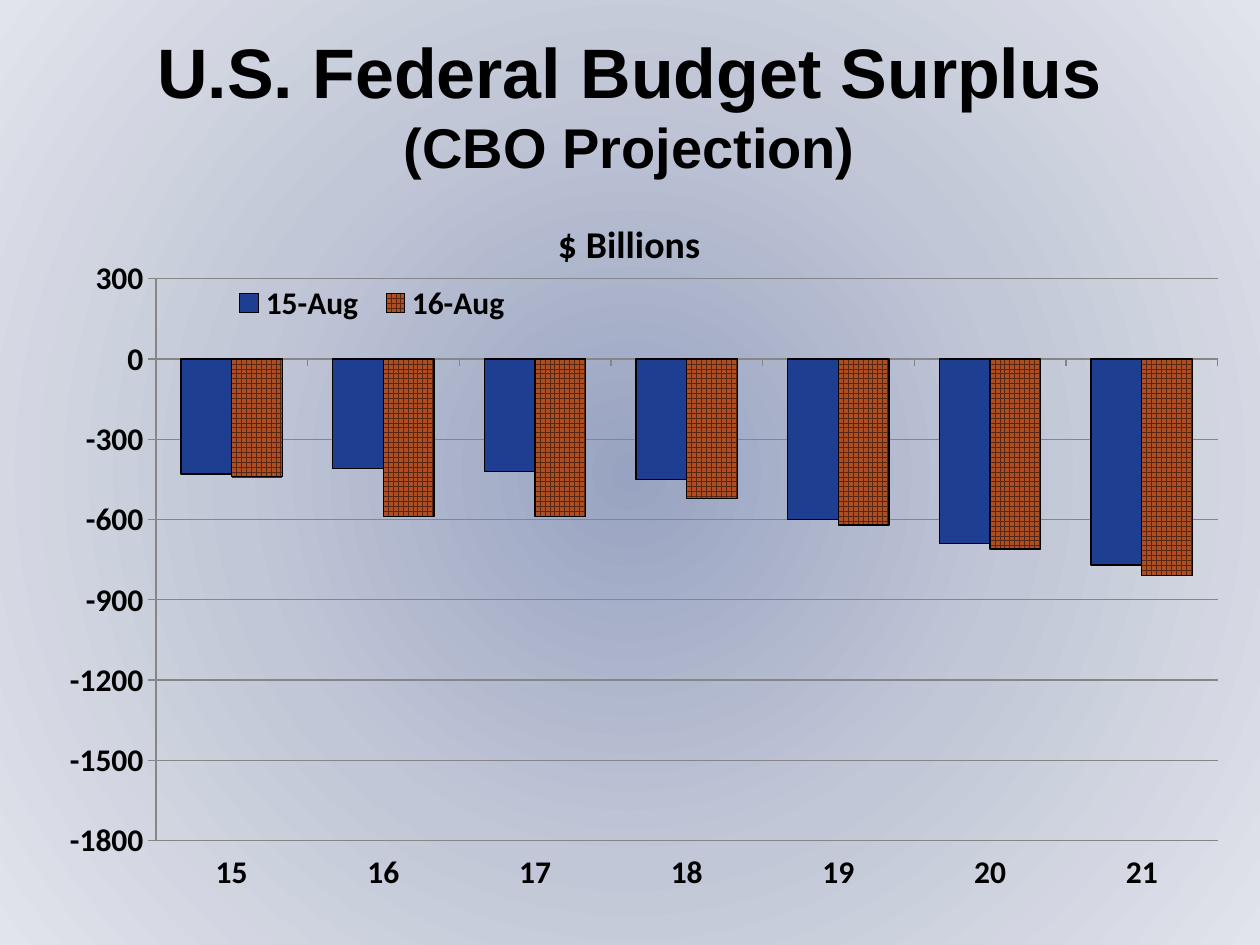
from dataclasses import dataclass

from lxml import etree
from pptx import Presentation
from pptx.chart.data import CategoryChartData
from pptx.dml.color import RGBColor
from pptx.enum.chart import XL_CHART_TYPE, XL_LEGEND_POSITION, XL_TICK_LABEL_POSITION, XL_TICK_MARK
from pptx.enum.dml import MSO_PATTERN
from pptx.enum.text import MSO_ANCHOR, MSO_AUTO_SIZE, PP_ALIGN
from pptx.oxml import parse_xml
from pptx.oxml.ns import nsdecls, qn
from pptx.util import Inches, Pt

COLUMNS = XL_CHART_TYPE.COLUMN_CLUSTERED
LEGEND_TOP = XL_LEGEND_POSITION.TOP
LABELS_LOW = XL_TICK_LABEL_POSITION.LOW
TICK_OUT = XL_TICK_MARK.OUTSIDE
TICK_NONE = XL_TICK_MARK.NONE
LARGE_GRID = MSO_PATTERN.LARGE_GRID
MIDDLE = MSO_ANCHOR.MIDDLE
NO_AUTOFIT = MSO_AUTO_SIZE.NONE
CENTER = PP_ALIGN.CENTER
TITLE_ONLY = 5


@dataclass(frozen=True)
class Theme:
    title_font: str = "Arial"
    chart_font: str = "Calibri"
    title_size: float = 40
    subtitle_size: float = 32
    chart_title_size: float = 21.6
    chart_size: float = 18
    line_width: float = 0.75
    text: str = "000000"
    grid: str = "868686"
    earlier: str = "1E3E92"
    later: str = "AE4E22"
    later_grid: str = "572711"
    background: tuple = ((0, "98A3C1"), (50, "C2C7D7"), (100, "E1E4EB"))


def color(value):
    return RGBColor.from_string(value)


class SlideBuilder:
    def __init__(self, slide, theme):
        self.slide = slide
        self.theme = theme

    def style_font(self, font, name, size):
        font.name = name
        font.size = Pt(size)
        font.bold = True
        font.color.rgb = color(self.theme.text)

    def style_line(self, line, value):
        line.color.rgb = color(value)
        line.width = Pt(self.theme.line_width)

    def background(self):
        self.slide.background.fill.solid()
        properties = self.slide.element.find(".//" + qn("p:bgPr"))
        stops = "".join(
            f'<a:gs pos="{position * 1000}"><a:srgbClr val="{value}"/></a:gs>'
            for position, value in self.theme.background
        )
        gradient = parse_xml(
            f'<a:gradFill {nsdecls("a")} rotWithShape="1"><a:gsLst>{stops}</a:gsLst>'
            '<a:path path="circle"><a:fillToRect l="50000" t="50000" r="50000" b="50000"/>'
            "</a:path></a:gradFill>"
        )
        properties.replace(properties.find(qn("a:solidFill")), gradient)

    def title(self, lines, left, top, width, height):
        box = self.slide.shapes.title
        box.left, box.top, box.width, box.height = left, top, width, height
        frame = box.text_frame
        frame.word_wrap = True
        frame.auto_size = NO_AUTOFIT
        frame.vertical_anchor = MIDDLE
        for index, (text, size) in enumerate(lines):
            para = frame.add_paragraph() if index else frame.paragraphs[0]
            para.alignment = CENTER
            para.space_before = Pt(0)
            span = para.add_run()
            span.text = text
            self.style_font(span.font, self.theme.title_font, size)

    def manual_layout(self, parent, left, top, width, height, inner=False):
        for previous in parent.findall(qn("c:layout")):
            parent.remove(previous)
        layout = etree.Element(qn("c:layout"))
        manual = etree.SubElement(layout, qn("c:manualLayout"))
        settings = [("layoutTarget", "inner")] if inner else []
        settings += [("xMode", "edge"), ("yMode", "edge")]
        settings += [("x", left), ("y", top), ("w", width), ("h", height)]
        for name, value in settings:
            etree.SubElement(manual, qn(f"c:{name}")).set("val", str(value))
        position = parent.find(qn("c:legendPos"))
        if position is None:
            parent.insert(0, layout)
        else:
            position.addnext(layout)

    def column_chart(self, title, categories, series, left, top, width, height):
        theme = self.theme
        data = CategoryChartData()
        data.categories = categories
        for name, values in series:
            data.add_series(name, values)
        chart = self.slide.shapes.add_chart(COLUMNS, left, top, width, height, data).chart
        self.style_font(chart.font, theme.chart_font, theme.chart_size)

        chart.has_title = True
        span = chart.chart_title.text_frame.paragraphs[0].add_run()
        span.text = title
        self.style_font(span.font, theme.chart_font, theme.chart_title_size)
        chart.chart_title.include_in_layout = False

        chart.has_legend = True
        chart.legend.position = LEGEND_TOP
        chart.legend.include_in_layout = False
        plot_area = chart.element.find(".//" + qn("c:plotArea"))
        self.manual_layout(plot_area, 0.104, 0.126, 0.888, 0.788, inner=True)
        legend = chart.element.find(".//" + qn("c:legend"))
        self.manual_layout(legend, 0.16, 0.13, 0.25, 0.06)

        for axis in (chart.category_axis, chart.value_axis):
            axis.major_tick_mark = TICK_OUT
            axis.minor_tick_mark = TICK_NONE
            self.style_line(axis.format.line, theme.grid)
        chart.category_axis.tick_label_position = LABELS_LOW
        scale = chart.value_axis
        scale.minimum_scale, scale.maximum_scale, scale.major_unit = -1800, 300, 300
        scale.has_major_gridlines = True
        self.style_line(scale.major_gridlines.format.line, theme.grid)
        scale.tick_labels.number_format = "0"
        scale.tick_labels.number_format_is_linked = False

        plot = chart.plots[0]
        plot.gap_width = 100
        plot.overlap = 0
        plot.vary_by_categories = False
        for column in plot.series:
            column.invert_if_negative = False
            self.style_line(column.format.line, theme.text)
        earlier, later = (column.format.fill for column in plot.series)
        earlier.solid()
        earlier.fore_color.rgb = color(theme.earlier)
        later.patterned()
        later.pattern = LARGE_GRID
        later.fore_color.rgb = color(theme.later_grid)
        later.back_color.rgb = color(theme.later)


def main():
    theme = Theme()
    deck = Presentation()
    deck.slide_width, deck.slide_height = Inches(10), Inches(7.5)
    page = SlideBuilder(deck.slides.add_slide(deck.slide_layouts[TITLE_ONLY]), theme)
    left, width = Inches(0.25), Inches(9.49)
    page.background()
    page.title(
        [
            ("U.S. Federal Budget Surplus", theme.title_size),
            ("(CBO Projection)", theme.subtitle_size),
        ],
        left, Inches(0.33), width, Inches(1),
    )
    page.column_chart(
        "$ Billions",
        [str(year) for year in range(15, 22)],
        [
            ("15-Aug", (-430, -410, -420, -450, -600, -690, -770)),
            ("16-Aug", (-440, -590, -590, -520, -620, -710, -810)),
        ],
        left, Inches(1.5), width, Inches(5.66),
    )
    deck.save("out.pptx")


if __name__ == "__main__":
    main()
